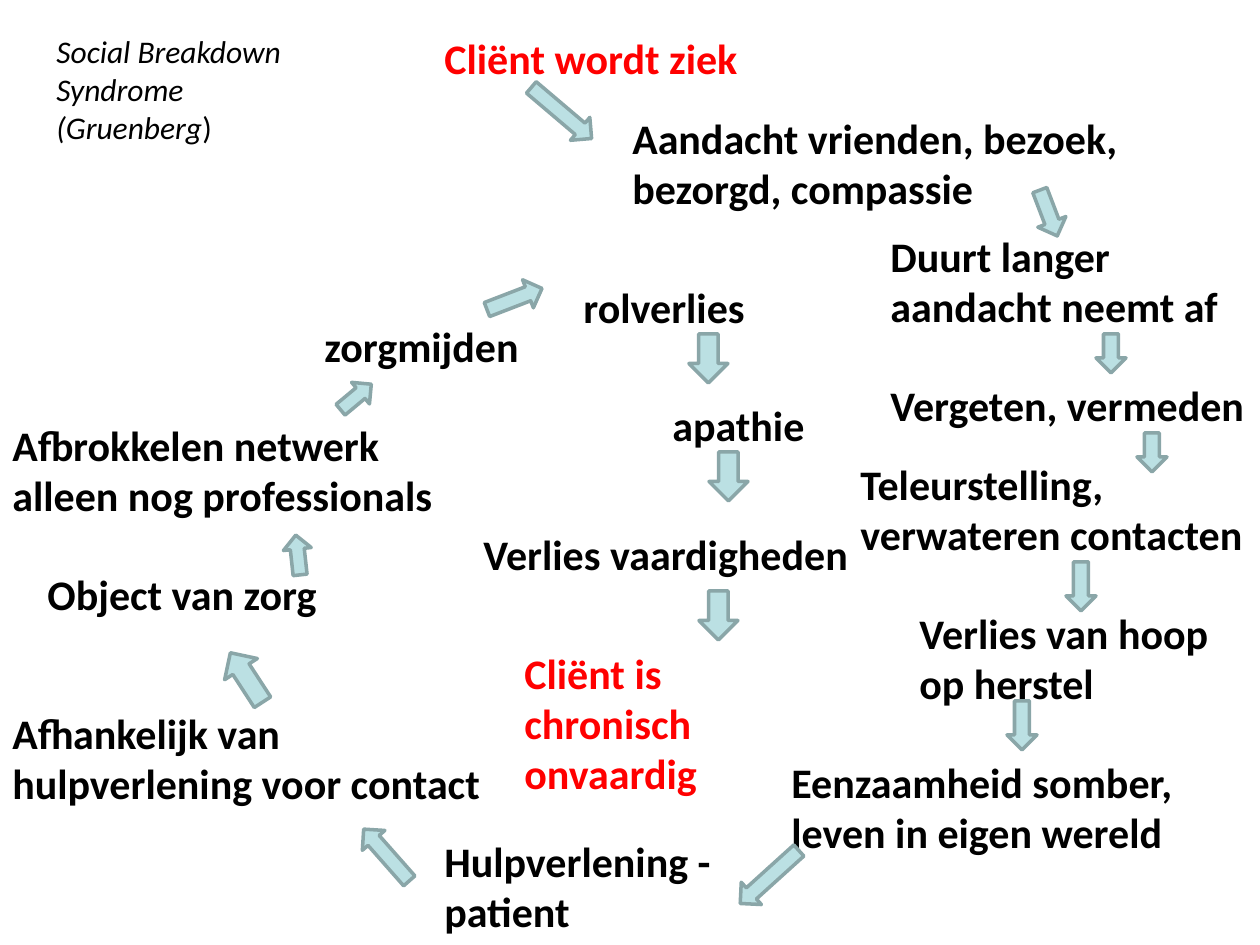
from pptx import Presentation, util as u
from pptx.dml.color import RGBColor
from pptx.enum import shapes, text

PX = 914400 / 126
RED = RGBColor(0xFF, 0, 0)
BLACK = RGBColor(0, 0, 0)
PALE_TEAL = RGBColor(0xBB, 0xE0, 0xE3)
GREY_TEAL = RGBColor(0x8A, 0xA6, 0xA8)
STEP = dict(name="Calibri", size=u.Pt(24), bold=True)
SOURCE = dict(name="Calibri", size=u.Pt(18), italic=True)
RIGHT = shapes.MSO_SHAPE.RIGHT_ARROW
DOWN = shapes.MSO_SHAPE.DOWN_ARROW

# text, (left, top, width, height), colour
STEPS = [
    ("Cliënt wordt ziek", (432, 26, 397, 63), RED),
    ("Aandacht vrienden, bezoek, bezorgd, compassie", (620, 106, 605, 115), BLACK),
    ("Duurt langer aandacht neemt af", (878, 224, 382, 115), BLACK),
    ("Vergeten, vermeden", (878, 373, 382, 63), BLACK),
    ("Teleurstelling, verwateren contacten", (848, 452, 412, 115), BLACK),
    ("Verlies van hoop op herstel", (907, 601, 328, 115), BLACK),
    ("Eenzaamheid somber, leven in eigen wereld", (779, 750, 441, 115), BLACK),
    ("Hulpverlening -\vpatient", (432, 829, 427, 115), BLACK),
    ("Afhankelijk van hulpverlening voor contact", (0, 701, 507, 115), BLACK),
    ("Object van zorg", (35, 562, 427, 63), BLACK),
    ("Afbrokkelen netwerk alleen nog professionals", (0, 413, 476, 115), BLACK),
    ("zorgmijden", (312, 314, 287, 63), BLACK),
    ("rolverlies", (571, 275, 228, 63), BLACK),
    ("apathie", (660, 393, 228, 63), BLACK),
    ("Verlies vaardigheden", (471, 522, 407, 63), BLACK),
    ("Cliënt is chronisch onvaardig", (512, 641, 258, 165), RED),
]
# preset, (left, top, width, height), rotation; in the order of the steps
ARROWS = [
    (RIGHT, (522, 98, 79, 30), 40.3),
    (RIGHT, (1024, 198, 49, 30), 69.1),
    (DOWN, (1096, 334, 30, 39), 0),
    (DOWN, (1137, 433, 30, 39), 0),
    (DOWN, (1066, 562, 30, 49), 0),
    (DOWN, (1007, 701, 30, 49), 0),
    (RIGHT, (730, 862, 79, 30), 137.9),
    (RIGHT, (352, 840, 69, 30), 228.6),
    (RIGHT, (217, 658, 59, 39), 237),
    (RIGHT, (278, 541, 40, 28), 263.8),
    (RIGHT, (336, 383, 40, 28), 320.3),
    (RIGHT, (485, 284, 59, 30), 339),
    (DOWN, (689, 334, 39, 49), 0),
    (DOWN, (709, 452, 39, 49), 0),
    (DOWN, (699, 591, 39, 49), 0),
]
# paragraphs of (text, format that differs)
CITATION = [
    [("Social Breakdown Syndrome", {})],
    [("(Gruenberg", {}), (")", {"italic": False})],
]
CITATION_BOX = (44, 26, 348, 127)


def emu(box):
    return [round(v * PX) for v in box]


def add_text(s, box, paragraphs, style, color):
    tf = s.shapes.add_textbox(*emu(box)).text_frame
    tf.word_wrap = True
    tf.auto_size = text.MSO_AUTO_SIZE.SHAPE_TO_FIT_TEXT
    for i, runs in enumerate(paragraphs):
        p = tf.paragraphs[0] if i == 0 else tf.add_paragraph()
        for words, changes in runs:
            for j, line in enumerate(words.split("\v")):
                if j:
                    p.add_line_break()
                r = p.add_run()
                r.text = line
                for key, value in {**style, **changes}.items():
                    setattr(r.font, key, value)
                r.font.color.rgb = color


def add_arrow(s, preset, box, rotation):
    sp = s.shapes.add_shape(preset, *emu(box))
    sp.rotation = rotation
    sp.shadow.inherit = False
    sp.fill.solid()
    sp.fill.fore_color.rgb = PALE_TEAL
    sp.line.color.rgb = GREY_TEAL
    sp.line.width = u.Pt(2)


def main():
    prs = Presentation()
    prs.slide_width, prs.slide_height = u.Inches(10), u.Inches(7.5)
    s = prs.slides.add_slide(prs.slide_layouts[6])
    for words, box, color in STEPS:
        add_text(s, box, [[(words, {})]], STEP, color)
    for arrow in ARROWS:
        add_arrow(s, *arrow)
    add_text(s, CITATION_BOX, CITATION, SOURCE, BLACK)
    prs.save("out.pptx")


if __name__ == "__main__":
    main()
